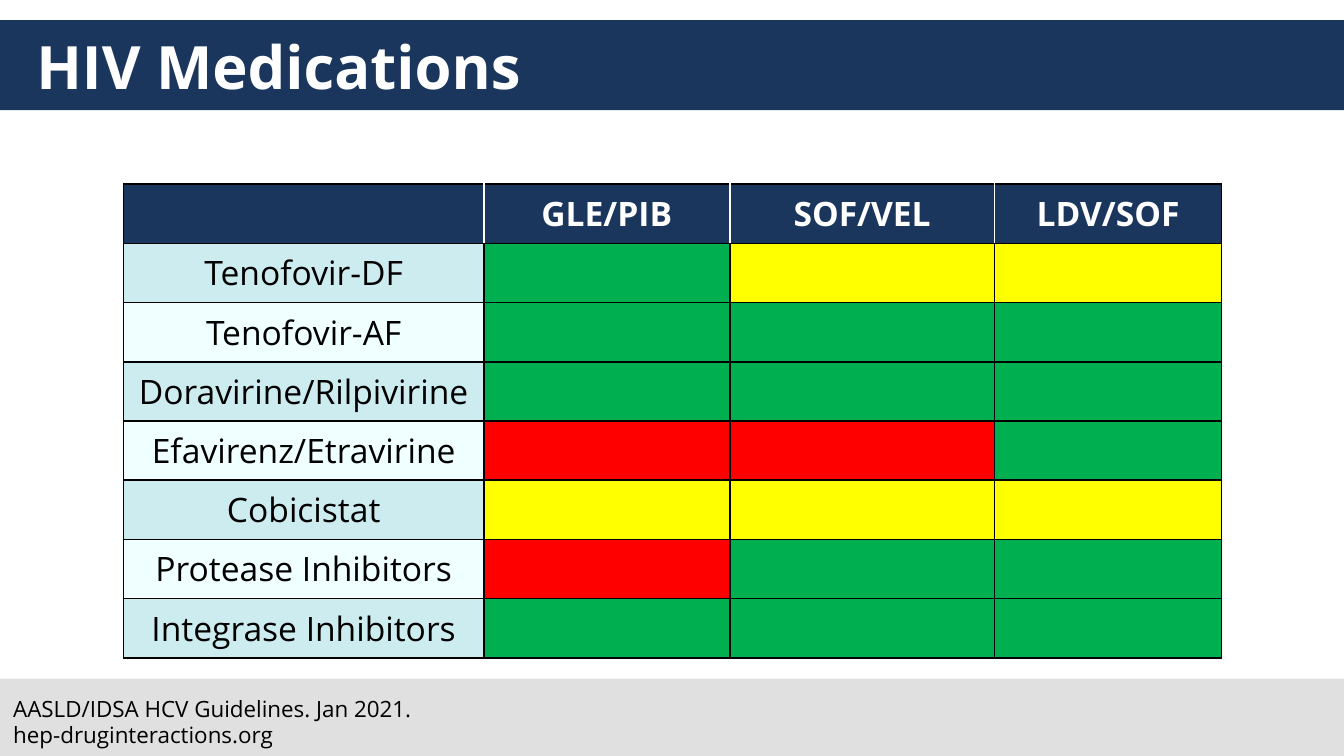
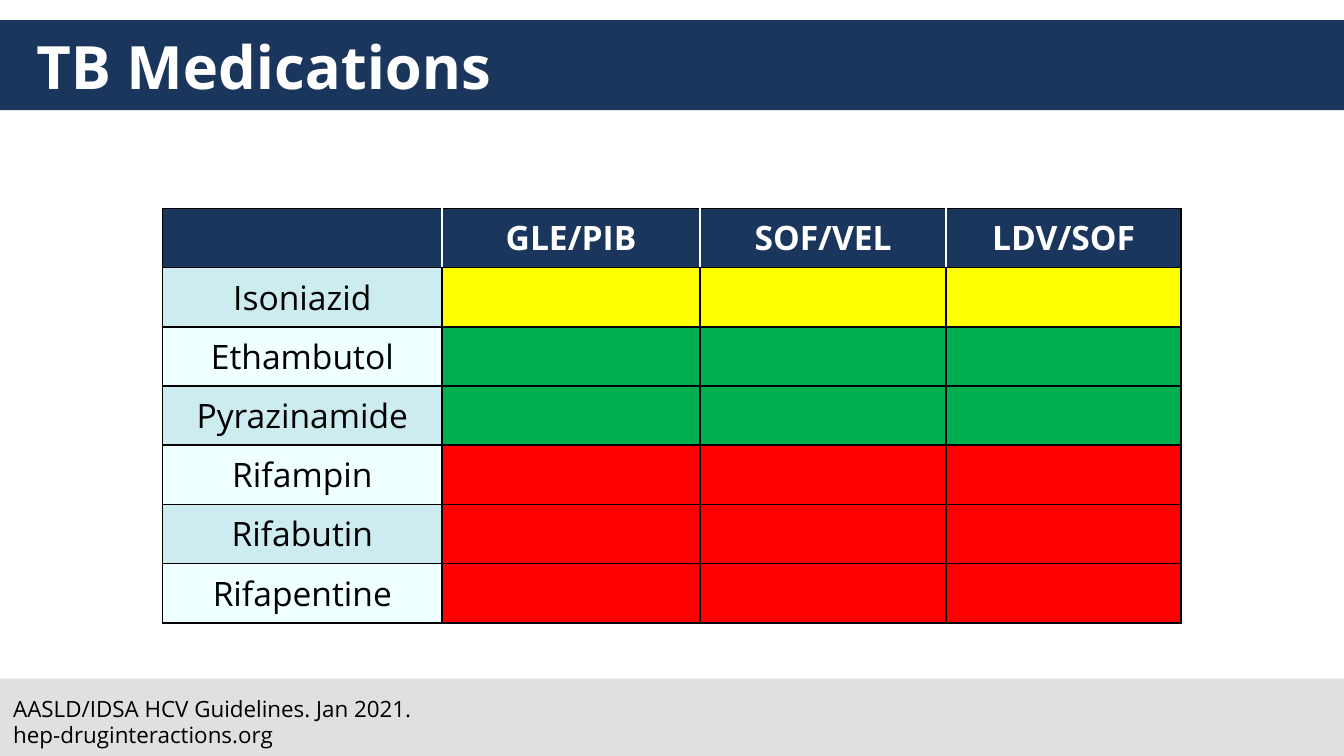
from lxml.etree import SubElement
from pptx import Presentation
from pptx.dml.color import RGBColor
from pptx.enum.shapes import MSO_SHAPE as Shape
from pptx.enum.text import MSO_ANCHOR as Anchor, MSO_AUTO_SIZE as Fit, PP_ALIGN as Align
from pptx.oxml.ns import qn
from pptx.util import Inches, Pt

# Content: G = green, Y = yellow, R = red, one letter per regimen
REGIMENS = ["GLE/PIB", "SOF/VEL", "LDV/SOF"]
SOURCES = ["AASLD/IDSA HCV Guidelines. Jan 2021.", "hep-druginteractions.org"]
SLIDES = [
    {
        "title": "HIV Medications",
        "at": (0.92, 1.37),
        "cols": [2.68, 1.83, 1.97, 1.69],
        "drugs": [
            ("Tenofovir-DF", "GYY"),
            ("Tenofovir-AF", "GGG"),
            ("Doravirine/Rilpivirine", "GGG"),
            ("Efavirenz/Etravirine", "RRG"),
            ("Cobicistat", "YYY"),
            ("Protease Inhibitors", "RGG"),
            ("Integrase Inhibitors", "GGG"),
        ],
    },
    {
        "title": "TB Medications",
        "at": (1.21, 1.55),
        "cols": [2.08, 1.92, 1.83, 1.75],
        "drugs": [
            ("Isoniazid", "YYY"),
            ("Ethambutol", "GGG"),
            ("Pyrazinamide", "GGG"),
            ("Rifampin", "RRR"),
            ("Rifabutin", "RRR"),
            ("Rifapentine", "RRR"),
        ],
    },
]

# Theme
THEME = {
    "navy": "1B365D", "gray": "E0E0E0", "white": "FFFFFF", "black": "000000",
    "G": "00B050", "Y": "FFFF00", "R": "FF0000",
    "stripes": ["CDECEF", "F0FFFF"],
}
FONTS = {
    "title": {"size": Pt(32), "bold": True, "color": "white"},
    "head": {"size": Pt(18), "bold": True, "color": "white"},
    "drug": {"size": Pt(18), "bold": False, "color": "black"},
    "source": {"size": Pt(12), "bold": False, "color": "black"},
}
BANDS = [("navy", 0.15, 0.67), ("gray", 5.05, 0.58)]
WIDTH, ROW = 10, 0.44
HEIGHT = WIDTH * 9 / 16


def paint(item, color):
    item.fill.solid()
    item.fill.fore_color.rgb = RGBColor.from_string(color)


def style(para, kind, align=Align.LEFT):
    para.alignment = align
    font = para.font
    font.name = "Open Sans"
    for key, value in FONTS[kind].items():
        if key == "color":
            font.color.rgb = RGBColor.from_string(THEME[value])
        else:
            setattr(font, key, value)


def place(shape, left, top, width, height):
    box = {"left": left, "top": top, "width": width, "height": height}
    for key, value in box.items():
        setattr(shape, key, Inches(value))


def border(cell, edges):
    props = cell._tc.get_or_add_tcPr()
    for side, color in edges.items():
        line = SubElement(props, qn(f"a:ln{side}"), w=str(Pt(1)))
        fill = SubElement(line, qn("a:solidFill"))
        SubElement(fill, qn("a:srgbClr"), val=THEME[color])


# Bands shared through the layout, behind everything else
def add_bands(slide, layout):
    for spot, (color, top, height) in enumerate(BANDS, 2):
        band = slide.shapes.add_shape(
            Shape.RECTANGLE, 0, Inches(top), Inches(WIDTH), Inches(height))
        band.shadow.inherit = False
        paint(band, THEME[color])
        band.line.fill.background()
        layout.shapes.element.insert(spot, band.element)


def add_title(slide, text):
    title = slide.shapes.title
    place(title, 0.17, 0.15, 9.67, 0.67)
    frame = title.text_frame
    frame.text = text
    frame.auto_size = Fit.NONE
    frame.vertical_anchor = Anchor.MIDDLE
    style(frame.paragraphs[0], "title")


def add_grid(slide, data):
    # Rows of (text, fill) pairs, heading first
    rows = [[(text, THEME["navy"]) for text in ["", *REGIMENS]]]
    for n, (drug, marks) in enumerate(data["drugs"]):
        stripe = THEME["stripes"][n % 2]
        rows.append([(drug, stripe)] + [("", THEME[mark]) for mark in marks])

    left, top = data["at"]
    cols = data["cols"]
    grid = slide.shapes.add_table(
        len(rows), len(cols), Inches(left), Inches(top),
        Inches(sum(cols)), Inches(ROW * len(rows))).table
    grid.horz_banding = False
    for col, width in zip(grid.columns, cols):
        col.width = Inches(width)
    for r, row in enumerate(rows):
        grid.rows[r].height = Inches(ROW)
        for c, (text, color) in enumerate(row):
            cell = grid.cell(r, c)
            cell.vertical_anchor = Anchor.MIDDLE
            if text:
                cell.text = text
                style(cell.text_frame.paragraphs[0], "drug" if r else "head", Align.CENTER)
            # White rules between headings, black elsewhere
            edges = dict.fromkeys("LRTB", "black")
            if r == 0 and c > 0:
                edges["L"] = "white"
            if r == 0 and c < len(cols) - 1:
                edges["R"] = "white"
            border(cell, edges)
            paint(cell, color)


def add_source(slide):
    box = slide.shapes.add_textbox(0, Inches(5.12), Inches(3.67), Inches(0.5))
    frame = box.text_frame
    frame.word_wrap = True
    frame.auto_size = Fit.SHAPE_TO_FIT_TEXT
    frame.text = "\n".join(SOURCES)
    for para in frame.paragraphs:
        style(para, "source")


def main():
    prs = Presentation()
    prs.slide_width, prs.slide_height = Inches(WIDTH), Inches(HEIGHT)
    layout = prs.slide_layouts[5]
    for n, data in enumerate(SLIDES):
        slide = prs.slides.add_slide(layout)
        if n == 0:
            add_bands(slide, layout)
        add_title(slide, data["title"])
        add_grid(slide, data)
        add_source(slide)
    prs.save("out.pptx")


if __name__ == "__main__":
    main()
